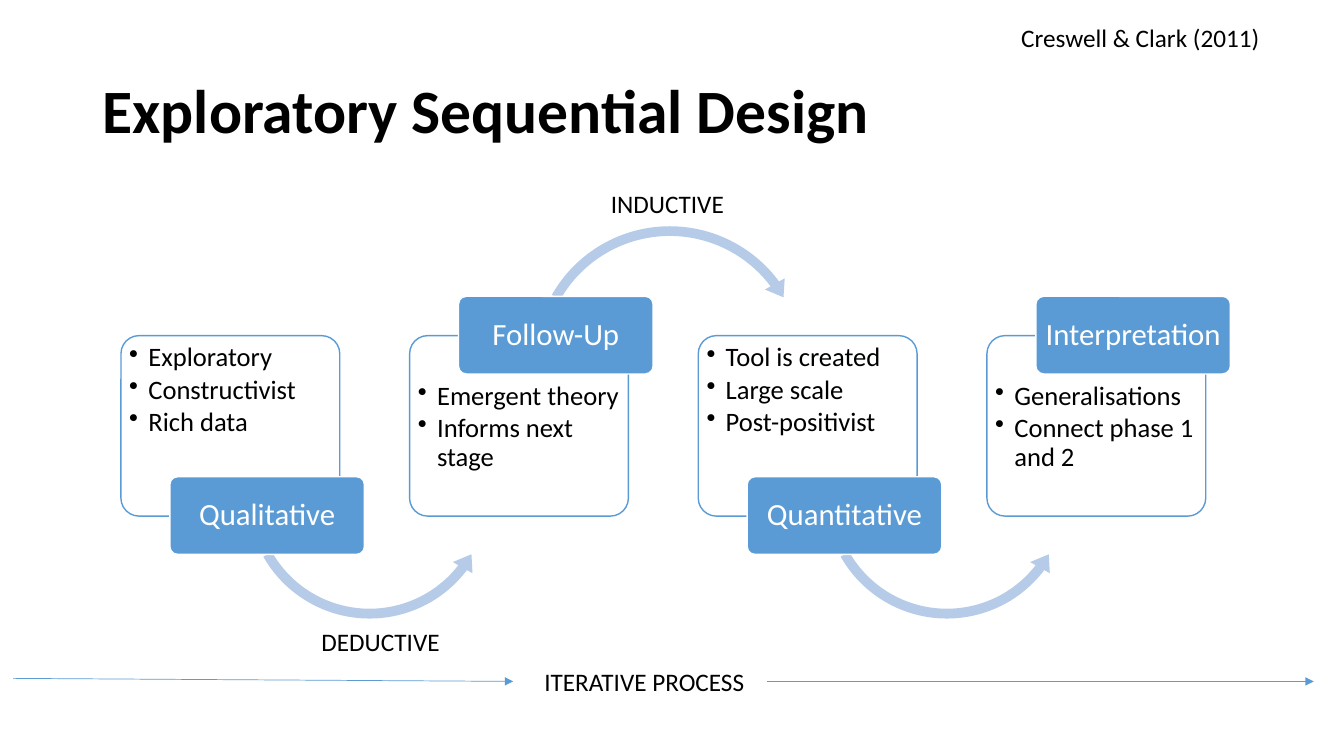
from lxml import etree
from pptx import Presentation
from pptx.dml.color import RGBColor
from pptx.enum.shapes import MSO_CONNECTOR, MSO_SHAPE
from pptx.enum.text import MSO_ANCHOR, PP_ALIGN
from pptx.oxml.ns import qn
from pptx.util import Inches, Pt

ROUNDED = MSO_SHAPE.ROUNDED_RECTANGLE
ARC_OVER = MSO_SHAPE.CIRCULAR_ARROW
ARC_UNDER = MSO_SHAPE.LEFT_CIRCULAR_ARROW
STRAIGHT = MSO_CONNECTOR.STRAIGHT
TOP, MIDDLE = MSO_ANCHOR.TOP, MSO_ANCHOR.MIDDLE
LEFT, CENTER = PP_ALIGN.LEFT, PP_ALIGN.CENTER

COLORS = {"ink": "000000", "paper": "FFFFFF", "blue": "5B9BD5", "arc": "B5CBE7"}
PHASE_LEFT, PHASE_STEP, PHASE_TOP = 12, 28.63, 33.3
PHASES = [
    ("Qualitative", ["Exploratory", "Constructivist", "Rich data"]),
    ("Follow-Up", ["Emergent theory", "Informs next stage"]),
    ("Quantitative", ["Tool is created", "Large scale", "Post-positivist"]),
    ("Interpretation", ["Generalisations", "Connect phase 1 and 2"]),
]
CAPTIONS = [
    ("ITERATIVE PROCESS", (53, 65.6, 23.1, 4)),
    ("DEDUCTIVE", (30.9, 61.6, 14.7, 4)),
    ("INDUCTIVE", (59.6, 18.2, 14.9, 4)),
    ("Creswell & Clark (2011)", (100.3, 1.7, 37, 4)),
]
TIMELINE = [((1.3, 67.3), (50.9, 67.6)), ((76.1, 67.6), (130.3, 67.6))]


class Sketch:
    """Draws styled elements on one slide, in grid cells of a tenth of an inch."""

    font = "Calibri"

    def __init__(self, deck):
        self.page = deck.slides.add_slide(deck.slide_layouts[6])

    def cells(self, *counts):
        return [Inches(count / 10) for count in counts]

    def color(self, name):
        return RGBColor.from_string(COLORS[name])

    def assign(self, target, values):
        for name, value in values.items():
            setattr(target, name, value)

    def fill_text(self, box, lines, size, color="ink", bold=False, anchor=TOP,
                  margins=(1, 0.5, 1, 0.5), bullet=False, **layout):
        frame = box.text_frame
        sides = ("margin_left", "margin_top", "margin_right", "margin_bottom")
        self.assign(frame, dict(zip(sides, self.cells(*margins)),
                                word_wrap=True, vertical_anchor=anchor))
        for index, line in enumerate(lines):
            para = frame.add_paragraph() if index else frame.paragraphs[0]
            self.assign(para, {"alignment": LEFT, **layout})
            if bullet:
                self.add_bullet(para)
            span = para.add_run()
            span.text = line
            self.assign(span.font, {"name": self.font, "size": Pt(size), "bold": bold})
            span.font.color.rgb = self.color(color)

    def add_bullet(self, para):
        properties = para._p.get_or_add_pPr()
        indent = Inches(0.19)
        properties.set("marL", str(indent))
        properties.set("indent", str(-indent))
        etree.SubElement(properties, qn("a:buChar")).set("char", "•")

    def text(self, place, line, size, **style):
        box = self.page.shapes.add_textbox(*self.cells(*place))
        self.fill_text(box, [line], size, **style)

    def shape(self, kind, place, fill, line=None, adjustments=(0.1,)):
        box = self.page.shapes.add_shape(kind, *self.cells(*place))
        box.shadow.inherit = False
        for index, value in enumerate(adjustments):
            box.adjustments[index] = value
        box.fill.solid()
        box.fill.fore_color.rgb = self.color(fill)
        if line:
            box.line.color.rgb = self.color(line)
            box.line.width = Pt(1)
        else:
            box.line.fill.background()
        return box

    def arrow(self, start, end):
        line = self.page.shapes.add_connector(STRAIGHT, *self.cells(*start, *end))
        line.line.color.rgb = self.color("blue")
        line.line.width = Pt(0.5)
        etree.SubElement(line.line._get_or_add_ln(), qn("a:tailEnd")).set("type", "triangle")
        etree.SubElement(line._element.spPr, qn("a:effectLst"))

    def arc(self, left, raised):
        if raised:
            self.shape(ARC_OVER, (left + 11.7, 21.8, 28.2, 28.2), "arc",
                       adjustments=(0.034, 4.2, 194.05, 125.76, 0.04))
        else:
            self.shape(ARC_UNDER, (left + 11.9, 36.5, 25.5, 25.5), "arc",
                       adjustments=(0.038, 4.7, 22.45, 90.25, 0.044))

    def phase(self, index, label, points):
        left = PHASE_LEFT + index * PHASE_STEP
        raised = index % 2 == 1
        card = self.shape(ROUNDED, (left, PHASE_TOP, 21.7, 17.9), "paper", "blue")
        self.fill_text(card, points, 19, bullet=True, line_spacing=0.9, space_after=Pt(2.4),
                       margins=(0.3, 4.1 if raised else 0.3, 0.3, 0.3))
        if index < len(PHASES) - 1:
            self.arc(left, raised)
        tag_top = 29.4 if raised else 47.3
        tag = self.shape(ROUNDED, (left + 4.85, tag_top, 19.3, 7.7), "blue", "paper")
        self.fill_text(tag, [label], 22, color="paper", anchor=MIDDLE, alignment=CENTER,
                       line_spacing=0.9, margins=(0.5, 0.3, 0.5, 0.3))


def main():
    deck = Presentation()
    deck.slide_width, deck.slide_height = Inches(13.33), Inches(7.5)
    sketch = Sketch(deck)
    sketch.text((9.2, 4, 115, 14.5), "Exploratory Sequential Design", 44,
                bold=True, anchor=MIDDLE, line_spacing=0.9)
    for index, (label, points) in enumerate(PHASES):
        sketch.phase(index, label, points)
    for start, end in TIMELINE:
        sketch.arrow(start, end)
    for line, place in CAPTIONS:
        sketch.text(place, line, 18)
    deck.save("out.pptx")


if __name__ == "__main__":
    main()
